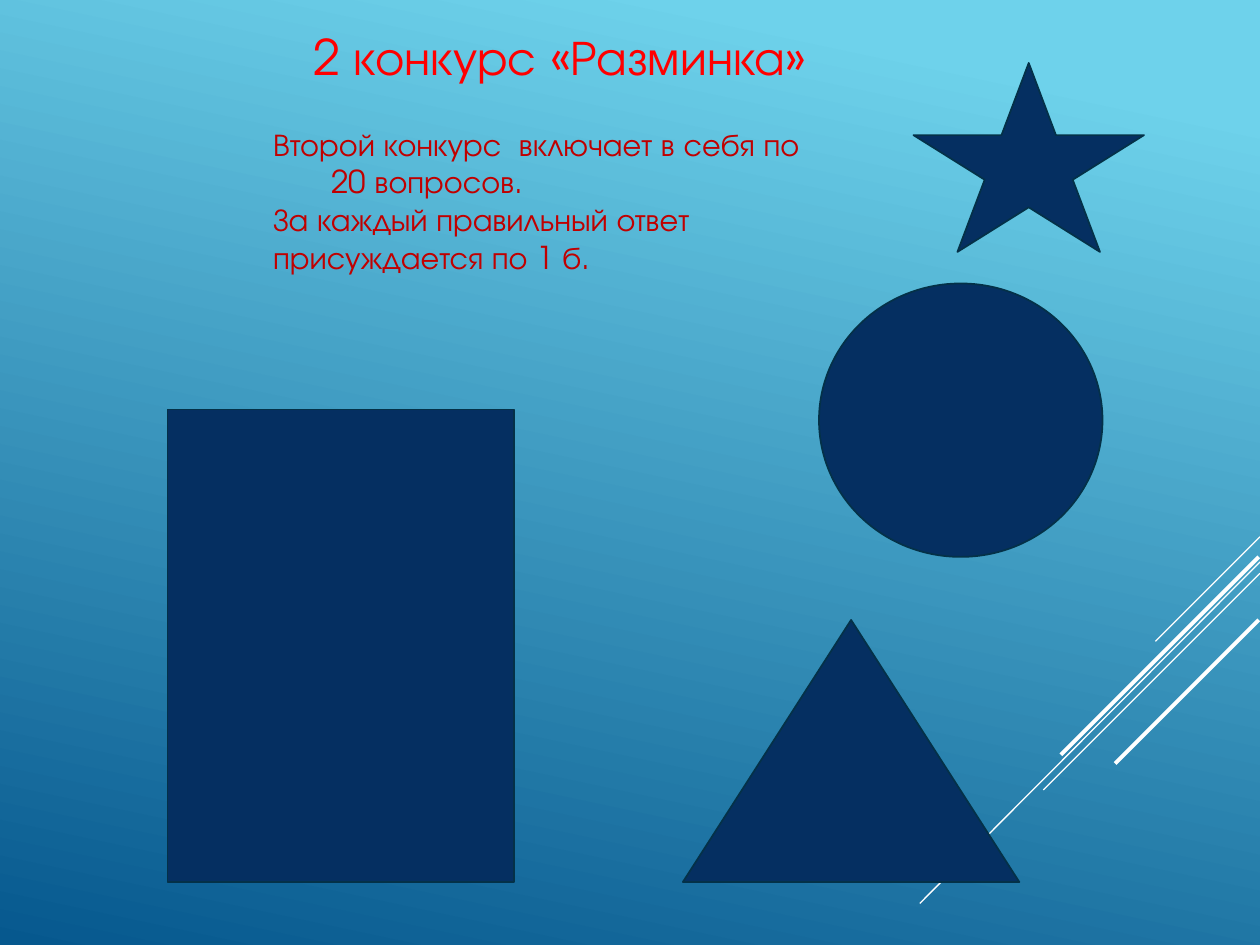
from lxml import etree
from pptx import Presentation
from pptx.dml.color import RGBColor
from pptx.enum.shapes import MSO_CONNECTOR, MSO_SHAPE
from pptx.enum.text import MSO_ANCHOR, MSO_AUTO_SIZE, PP_ALIGN
from pptx.oxml.ns import qn
from pptx.util import Inches, Pt

STRAIGHT = MSO_CONNECTOR.STRAIGHT
LEFT, RIGHT = PP_ALIGN.LEFT, PP_ALIGN.RIGHT

THEME = {
    "font": "TeX Gyre Adventor",
    "title": ("FF0000", 28),
    "rules": ("C00000", 18),
    "fill": "052F61",
    "outline": ("043148", 1),
    "stripe": "FFFFFF",
    "sky": [(0.1, "6ED2EB"), (1, "06588E")],
    "sky_angle": 258,
}

TITLE = "2 конкурс «Разминка»"
TITLE_BOX = (0.33, 0.16, 6.17, 0.6)
RULES = [
    ("Второй конкурс  включает в себя по 20 вопросов.", 0.46),
    ("За каждый правильный ответ присуждается по 1 б.", 0),
]
RULES_BOX = (2.07, 0.94, 4.5, 1.31)

FIGURES = [
    (MSO_SHAPE.OVAL, (6.5, 2.25, 2.25, 2.17)),
    (MSO_SHAPE.RECTANGLE, (1.33, 3.25, 2.75, 3.75)),
    (MSO_SHAPE.ISOSCELES_TRIANGLE, (5.42, 4.92, 2.67, 2.08)),
    (MSO_SHAPE.STAR_5_POINT, (7.25, 0.5, 1.83, 1.5)),
]

STRIPES = [
    ((10, 4.26), (9.17, 5.09), 0.75),
    ((10, 4.46), (7.3, 7.17), 0.75),
    ((10, 4.55), (8.28, 6.27), 0.75),
    ((9.99, 4.42), (8.42, 5.99), 2.25),
    ((9.99, 4.92), (8.85, 6.06), 2.25),
]


def inches(values):
    return [Inches(value) for value in values]


def paint_sky(slide):
    fill = slide.background.fill
    fill.gradient()
    fill.gradient_angle = THEME["sky_angle"]
    for stop, (position, color) in zip(fill.gradient_stops, THEME["sky"]):
        stop.position = position
        stop.color.rgb = RGBColor.from_string(color)


def set_line(line, color, width):
    line.color.rgb = RGBColor.from_string(color)
    line.width = Pt(width)


def add_stripe(slide, start, end, width):
    stripe = slide.shapes.add_connector(STRAIGHT, *inches(start + end))
    set_line(stripe.line, THEME["stripe"], width)
    etree.SubElement(stripe._element.spPr, qn("a:effectLst"))


def add_figure(slide, kind, box):
    figure = slide.shapes.add_shape(kind, *inches(box))
    figure.shadow.inherit = False
    figure.fill.solid()
    figure.fill.fore_color.rgb = RGBColor.from_string(THEME["fill"])
    set_line(figure.line, *THEME["outline"])


def write(holder, lines, style, alignment):
    frame = holder.text_frame
    frame_format = {
        "word_wrap": True,
        "auto_size": MSO_AUTO_SIZE.NONE,
        "vertical_anchor": MSO_ANCHOR.TOP,
    }
    for name, value in frame_format.items():
        setattr(frame, name, value)
    color, size = THEME[style]
    frame.text = "\n".join(text for text, _ in lines)
    for paragraph, (_, hanging) in zip(frame.paragraphs, lines):
        paragraph.alignment = alignment
        if hanging:
            properties = paragraph._p.get_or_add_pPr()
            properties.set("marL", str(Inches(hanging)))
            properties.set("indent", str(-Inches(hanging)))
        font = paragraph.runs[0].font
        for name, value in {"name": THEME["font"], "size": Pt(size)}.items():
            setattr(font, name, value)
        font.color.rgb = RGBColor.from_string(color)


def main():
    deck = Presentation()
    deck.slide_width, deck.slide_height = inches((10, 7.5))
    slide = deck.slides.add_slide(deck.slide_layouts[5])
    paint_sky(slide)
    for stripe in STRIPES:
        add_stripe(slide, *stripe)

    title = slide.shapes.title
    for name, value in zip(("left", "top", "width", "height"), inches(TITLE_BOX)):
        setattr(title, name, value)
    write(title, [(TITLE, 0)], "title", RIGHT)
    rules = slide.shapes.add_textbox(*inches(RULES_BOX))
    write(rules, RULES, "rules", LEFT)

    for figure in FIGURES:
        add_figure(slide, *figure)
    deck.save("out.pptx")


if __name__ == "__main__":
    main()
